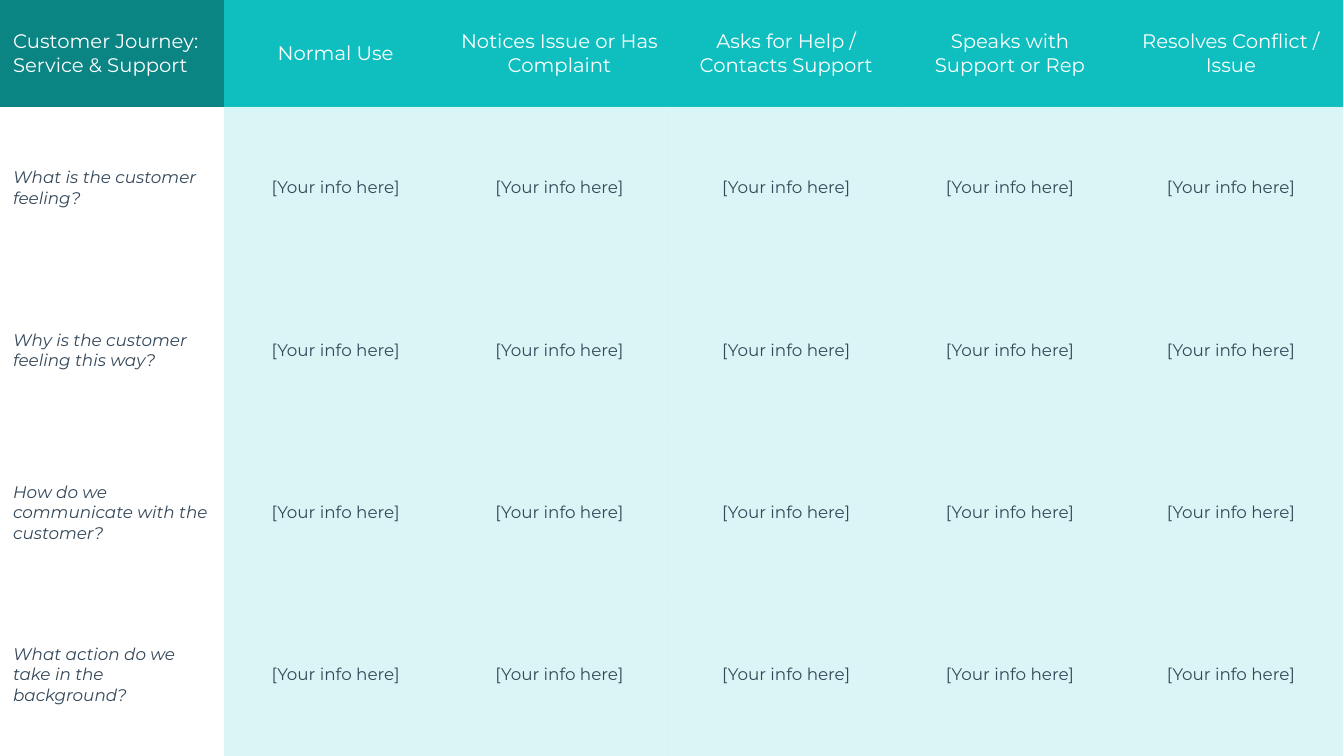
from dataclasses import dataclass

import lxml.etree
import pptx
import pptx.dml.color
import pptx.enum.text
import pptx.oxml.ns
import pptx.table
import pptx.util

Cm = pptx.util.Cm
RGB = pptx.dml.color.RGBColor.from_string
ALIGN = pptx.enum.text.PP_ALIGN


@dataclass(frozen=True)
class Theme:
    font: str = "Montserrat"
    corner: str = "0B8484"
    header: str = "0FBFBF"
    body: str = "B7ECEC"
    white: str = "FFFFFF"
    ink: str = "34485A"
    header_size: int = 14
    body_size: int = 12
    body_opacity: int = 50


@dataclass(frozen=True)
class Question:
    text: str
    answers: tuple[str, ...]


THEME = Theme()
NO_GRID_STYLE = "{2D5ABB26-0587-4C30-8999-92F81FD0307C}"
COL_WIDTHS = (5.64, 5.64, 5.64, 5.79, 5.49, 5.64)
HEADER_HEIGHT = 2.69
ROW_HEIGHT = 4.09
CELL_MARGIN = 0.33
TITLE = "Customer Journey: Service & Support"
STAGES = (
    "Normal Use",
    "Notices Issue or Has Complaint",
    "Asks for Help / Contacts Support",
    "Speaks with Support or Rep",
    "Resolves Conflict / Issue",
)
ANSWERS = ("[Your info here]",) * len(STAGES)
QUESTIONS = (
    Question("What is the customer feeling?", ANSWERS),
    Question("Why is the customer feeling this way?", ANSWERS),
    Question("How do we communicate with the customer?", ANSWERS),
    Question("What action do we take in the background?", ANSWERS),
)


def write_text(cell: pptx.table._Cell, text: str, *, size: int, color: str,
               align: ALIGN = ALIGN.CENTER, italic: bool = False) -> None:
    cell.vertical_anchor = pptx.enum.text.MSO_ANCHOR.MIDDLE
    cell.margin_left = cell.margin_right = Cm(CELL_MARGIN)
    cell.margin_top = cell.margin_bottom = Cm(CELL_MARGIN)
    p = cell.text_frame.paragraphs[0]
    p.alignment = align
    r = p.add_run()
    r.text = text
    r.font.name = THEME.font
    r.font.size = pptx.util.Pt(size)
    r.font.italic = italic
    r.font.color.rgb = RGB(color)


def fill_cell(cell: pptx.table._Cell, color: str, opacity: int = 100) -> None:
    cell.fill.solid()
    cell.fill.fore_color.rgb = RGB(color)
    if opacity < 100:
        clr = cell._tc.tcPr.find(".//" + pptx.oxml.ns.qn("a:srgbClr"))
        alpha = lxml.etree.SubElement(clr, pptx.oxml.ns.qn("a:alpha"))
        alpha.set("val", str(opacity * 1000))


def draw_header(table: pptx.table.Table) -> None:
    for col, text in enumerate((TITLE, *STAGES)):
        cell = table.cell(0, col)
        fill_cell(cell, THEME.header if col else THEME.corner)
        write_text(cell, text, size=THEME.header_size, color=THEME.white,
                   align=ALIGN.CENTER if col else ALIGN.LEFT)


def draw_question(table: pptx.table.Table, row: int, question: Question) -> None:
    label = table.cell(row, 0)
    label.fill.background()
    write_text(label, question.text, size=THEME.body_size, color=THEME.ink,
               align=ALIGN.LEFT, italic=True)
    for col, answer in enumerate(question.answers, start=1):
        cell = table.cell(row, col)
        fill_cell(cell, THEME.body, THEME.body_opacity)
        write_text(cell, answer, size=THEME.body_size, color=THEME.ink)


def main() -> None:
    prs = pptx.Presentation()
    prs.slide_width, prs.slide_height = Cm(33.87), Cm(19.05)
    s = prs.slides.add_slide(prs.slide_layouts[6])

    heights = (HEADER_HEIGHT,) + (ROW_HEIGHT,) * len(QUESTIONS)
    table = s.shapes.add_table(len(heights), len(COL_WIDTHS), 0, 0,
                               Cm(sum(COL_WIDTHS)), Cm(sum(heights))).table
    table.first_row = table.horz_banding = False
    table._tbl.tblPr.find(pptx.oxml.ns.qn("a:tableStyleId")).text = NO_GRID_STYLE
    for column, width in zip(table.columns, COL_WIDTHS):
        column.width = Cm(width)
    for row, height in zip(table.rows, heights):
        row.height = Cm(height)

    draw_header(table)
    for row, question in enumerate(QUESTIONS, start=1):
        draw_question(table, row, question)
    prs.save("out.pptx")


if __name__ == "__main__":
    main()
